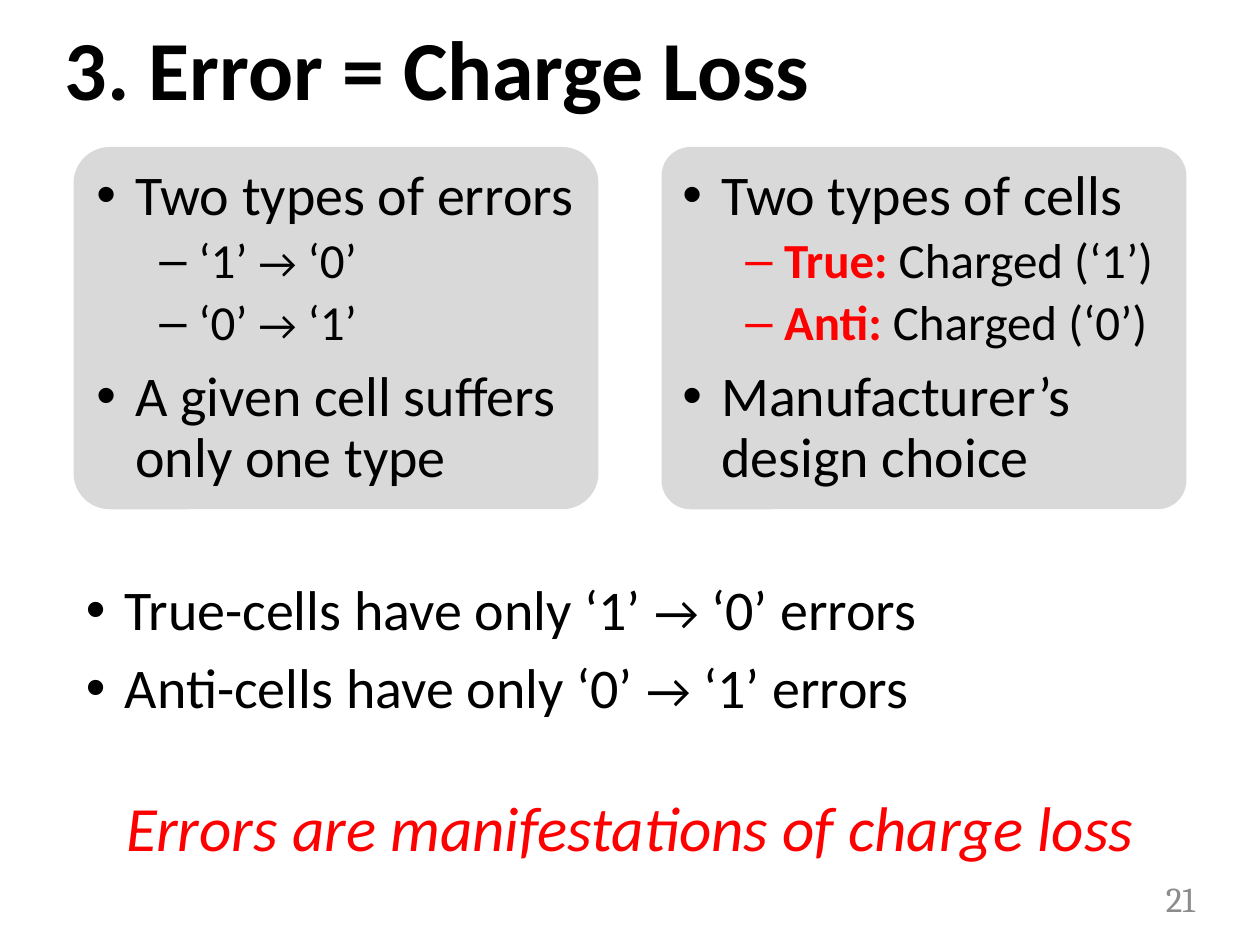
import dataclasses
import typing

import lxml.etree
import pptx
import pptx.dml.color
import pptx.enum.shapes
import pptx.enum.text
import pptx.oxml.ns
import pptx.util

EMU_PER_PX = 7620  # 120 px to the inch
BLACK, RED, GREY, PANEL_FILL = "000000", "FF0000", "8C8C8C", "D9D9D9"
ALIGN = pptx.enum.text.PP_ALIGN


class Box(typing.NamedTuple):
    left: int
    top: int
    width: int
    height: int


class Bullet(typing.NamedTuple):
    character: str
    level: int
    margin: int
    hanging: int
    space_before: int


@dataclasses.dataclass
class Run:
    text: str
    size: int
    color: str = BLACK
    bold: bool = False
    italic: bool = False
    font: str = "Calibri"


@dataclasses.dataclass
class Line:
    runs: list[Run]
    bullet: Bullet | None = None
    align: ALIGN = ALIGN.LEFT
    spacing: float = 1.0


@dataclasses.dataclass
class Panel:
    box: Box
    corner: float
    lines: list[Line]


MAIN = Bullet("•", 0, 37, 37, 10)
SUB = Bullet("–", 1, 97, 37, 5)


def px(length: int) -> pptx.util.Emu:
    return pptx.util.Emu(length * EMU_PER_PX)


def rgb(color: str) -> pptx.dml.color.RGBColor:
    return pptx.dml.color.RGBColor.from_string(color)


def plain(text: str, **text_format) -> Line:
    """A line of one run without a bullet."""
    align = text_format.pop("align", ALIGN.LEFT)
    spacing = text_format.pop("spacing", 1.0)
    return Line([Run(text, **text_format)], align=align, spacing=spacing)


def bulleted(bullet: Bullet, *runs: Run) -> Line:
    return Line(list(runs), bullet, spacing=0.9)


def flip(bullet: Bullet, before: str, after: str, size: int) -> Line:
    """A bulleted line whose arrow is 4 pt smaller than its words."""
    return bulleted(bullet, Run(f"{before} ", size), Run("→", size - 4), Run(f" {after}", size))


def cell_type(name: str, value: str) -> Line:
    return bulleted(SUB, Run(f"{name}:", 28, RED, bold=True), Run(f" Charged ({value})", 28))


def set_bullet(paragraph, bullet: Bullet) -> None:
    paragraph.level = bullet.level
    paragraph.space_before = pptx.util.Pt(bullet.space_before)
    properties = paragraph._p.get_or_add_pPr()
    properties.set("marL", str(px(bullet.margin)))
    properties.set("indent", str(px(-bullet.hanging)))
    for tag, attribute, value in (("a:buFont", "typeface", "Arial"),
                                  ("a:buChar", "char", bullet.character)):
        element = lxml.etree.SubElement(properties, pptx.oxml.ns.qn(tag))
        element.set(attribute, value)


def write_lines(shape, lines: list[Line]) -> None:
    frame = shape.text_frame
    frame.word_wrap = True
    frame.vertical_anchor = pptx.enum.text.MSO_ANCHOR.MIDDLE
    for index, line in enumerate(lines):
        paragraph = frame.add_paragraph() if index else frame.paragraphs[0]
        paragraph.alignment = line.align
        paragraph.line_spacing = line.spacing
        if line.bullet:
            set_bullet(paragraph, line.bullet)
        for item in line.runs:
            run = paragraph.add_run()
            run.text = item.text
            run.font.name = item.font
            run.font.size = pptx.util.Pt(item.size)
            run.font.bold = item.bold
            run.font.italic = item.italic
            run.font.color.rgb = rgb(item.color)


def draw_text(slide, box: Box, lines: list[Line]) -> None:
    write_lines(slide.shapes.add_textbox(*map(px, box)), lines)


def draw_panel(slide, panel: Panel) -> None:
    shape = slide.shapes.add_shape(
        pptx.enum.shapes.MSO_SHAPE.ROUNDED_RECTANGLE, *map(px, panel.box))
    shape.adjustments[0] = panel.corner
    shape.shadow.inherit = False
    shape.fill.solid()
    shape.fill.fore_color.rgb = rgb(PANEL_FILL)
    shape.line.fill.background()
    write_lines(shape, panel.lines)


PANELS = [
    Panel(Box(70, 140, 500, 345), 0.1, [
        bulleted(MAIN, Run("Two types of errors", 32)),
        flip(SUB, "‘1’", "‘0’", 28),
        flip(SUB, "‘0’", "‘1’", 28),
        bulleted(MAIN, Run("A given cell suffers only one type", 32)),
    ]),
    Panel(Box(630, 140, 500, 345), 0.08, [
        bulleted(MAIN, Run("Two types of cells", 32)),
        cell_type("True", "‘1’"),
        cell_type("Anti", "‘0’"),
        bulleted(MAIN, Run("Manufacturer’s design choice", 32)),
    ]),
]


def main() -> None:
    presentation = pptx.Presentation()
    presentation.slide_width, presentation.slide_height = px(1200), px(900)
    slide = presentation.slides.add_slide(presentation.slide_layouts[6])

    draw_text(slide, Box(50, 20, 1100, 100),
              [plain("3. Error = Charge Loss", size=48, bold=True, spacing=0.9)])
    for panel in PANELS:
        draw_panel(slide, panel)
    draw_text(slide, Box(70, 530, 1060, 180), [
        flip(MAIN, "True-cells have only ‘1’", "‘0’ errors", 32),
        flip(MAIN, "Anti-cells have only ‘0’", "‘1’ errors", 32),
    ])
    draw_text(slide, Box(70, 737, 1060, 100), [
        plain("Errors are manifestations of charge loss", size=36, color=RED,
              italic=True, align=ALIGN.CENTER)])
    draw_text(slide, Box(1060, 832, 90, 48), [
        plain("21", size=20, color=GREY, font="Cambria", align=ALIGN.RIGHT)])

    presentation.save("out.pptx")


if __name__ == "__main__":
    main()
